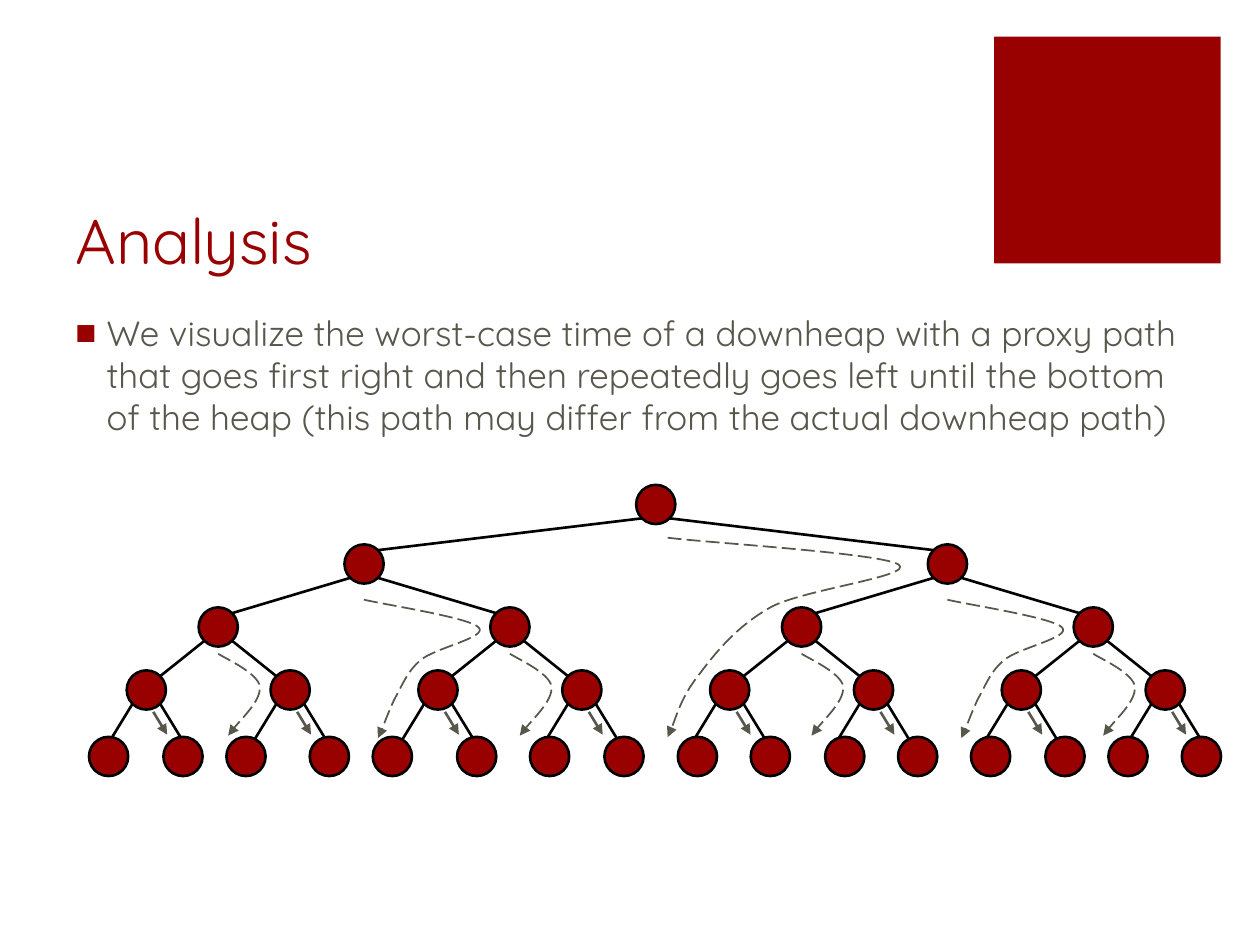
from lxml.etree import SubElement
from pptx import Presentation
from pptx.dml.color import RGBColor
from pptx.enum.dml import MSO_LINE
from pptx.enum.shapes import MSO_CONNECTOR, MSO_SHAPE
from pptx.enum.text import MSO_ANCHOR
from pptx.oxml.ns import qn
from pptx.util import Cm, Pt

RED, BLACK, GRAY = "990000", "000000", "59564B"
FONT = "Quicksand"
NODE = 0.79
CORNER = 0.28
ROOT_X = 11.42
SPREADS = [5.88, 2.94, 1.45]
LEVEL_Y = [0.39, 1.59, 2.86, 4.13]
LEAF_Y = 5.47
LEAF_X = [0.39, 1.89, 3.16, 4.84, 6.11, 7.81, 9.28, 10.78,
          12.26, 13.73, 15.23, 16.7, 18.17, 19.67, 20.94, 22.42]
LEAF_EDGE = (0.72, 1.0)
ARROW = [(0.14, 0.44), (0.42, 0.9)]
PROXY_PATHS = [
    [(0.24, 0.67), (1, 0.77), (4.53, 0.98), (4.89, 1.21), (5.25, 1.44),
     (2.98, 1.71), (2.32, 2.07), (1.64, 2.45), (1.21, 2.98), (0.88, 3.42),
     (0.52, 3.87), (0.37, 4.43), (0.24, 4.69)],
    [(0, 0.72), (0.41, 0.82), (2.13, 1.08), (2.31, 1.28), (2.51, 1.48),
     (1.42, 1.69), (1.14, 1.94), (0.86, 2.17), (0.76, 2.47), (0.61, 2.73),
     (0.48, 3.01), (0.36, 3.36), (0.28, 3.51)],
    [(0, 0.54), (0.15, 0.64), (0.79, 0.92), (0.84, 1.2), (0.86, 1.48),
     (0.33, 1.99), (0.2, 2.19)],
]


def color(value):
    """Return the colour for a hex string."""
    return RGBColor.from_string(value)


def add_text(page, box, text, size=20, fill=GRAY, anchor=MSO_ANCHOR.TOP, bullet=None):
    """Add one paragraph of text in a box, with an optional bullet."""
    shape = page.shapes.add_textbox(*map(Cm, box))
    frame = shape.text_frame
    frame.word_wrap = True
    frame.vertical_anchor = anchor
    para = frame.paragraphs[0]
    span = para.add_run()
    span.text = text
    span.font.name = FONT
    span.font.size = Pt(size)
    span.font.color.rgb = color(fill)
    if bullet:
        props = para._p.get_or_add_pPr()
        indent = Cm(0.63)
        props.set("marL", str(indent))
        props.set("indent", str(-indent))
        SubElement(SubElement(props, qn("a:buClr")), qn("a:srgbClr"), val=RED)
        SubElement(props, qn("a:buFont"), typeface="Arial")
        SubElement(props, qn("a:buChar"), char=bullet)


def add_solid(page, kind, box, outline=None):
    """Add a red preset shape, outlined if a colour is given."""
    shape = page.shapes.add_shape(kind, *map(Cm, box))
    shape.shadow.inherit = False
    shape.fill.solid()
    shape.fill.fore_color.rgb = color(RED)
    if outline:
        shape.line.color.rgb = color(outline)
        shape.line.width = Pt(1.5)
    else:
        shape.line.fill.background()


def add_node(page, center):
    """Add a tree node around its center."""
    x, y = center
    add_solid(page, MSO_SHAPE.OVAL, (x - NODE / 2, y - NODE / 2, NODE, NODE), BLACK)


def dash_with_arrow(line):
    """Make a line long-dashed with a triangle at its end."""
    line.dash_style = MSO_LINE.LONG_DASH
    SubElement(line._get_or_add_ln(), qn("a:tailEnd"), type="triangle")


def add_line(page, start, end, stroke=BLACK):
    """Add a straight line between two points."""
    line = page.shapes.add_connector(MSO_CONNECTOR.STRAIGHT, *map(Cm, (*start, *end)))
    line.line.color.rgb = color(stroke)
    line.line.width = Pt(1.5)
    SubElement(line._element.spPr, qn("a:effectLst"))
    return line


def add_curve(page, points):
    """Add a dashed arrow of cubic curves through the start and control points."""
    start, *rest = [(Cm(x), Cm(y)) for x, y in points]
    builder = page.shapes.build_freeform(*start)
    builder.add_line_segments(rest, close=False)
    shape = builder.convert_to_shape()
    shape.shadow.inherit = False
    shape.fill.background()
    shape.line.color.rgb = color(GRAY)
    shape.line.width = Pt(1)
    dash_with_arrow(shape.line)
    segments = list(shape._element.iter(qn("a:lnTo")))
    outline = segments[0].getparent()
    for first in range(0, len(segments), 3):
        curve = SubElement(outline, qn("a:cubicBezTo"))
        for segment in segments[first:first + 3]:
            curve.append(segment[0])
            outline.remove(segment)


def shift(points, origin):
    """Move points by an origin."""
    return [(origin[0] + x, origin[1] + y) for x, y in points]


def add_tree(page, left, top):
    """Draw the heap with its proxy paths from a top left corner."""
    levels = [[(left + ROOT_X, top + LEVEL_Y[0])]]
    for spread, y in zip(SPREADS, LEVEL_Y[1:]):
        levels.append([(x + side * spread, top + y)
                       for x, _ in levels[-1] for side in (-1, 1)])
    for parents, children in zip(levels, levels[1:]):
        for index, (x, y) in enumerate(children):
            side = 1 if index % 2 else -1
            parent_x, parent_y = parents[index // 2]
            add_line(page, (parent_x + side * CORNER, parent_y + CORNER),
                     (x - side * CORNER, y - CORNER))
    for x, y in levels[-1]:
        for side in (-1, 1):
            add_line(page, (x + side * CORNER, y + CORNER),
                     (x + side * LEAF_EDGE[0], y + LEAF_EDGE[1]))
    for level in levels:
        for center in level:
            add_node(page, center)
    for level, path_points in zip(levels, PROXY_PATHS):
        for center in level:
            add_curve(page, shift(path_points, center))
    for center in levels[-1]:
        arrow = add_line(page, *shift(ARROW, center), stroke=GRAY)
        dash_with_arrow(arrow.line)
    for x in LEAF_X:
        add_node(page, (left + x, top + LEAF_Y))


def add_heading(page, left, top):
    """Place the title, the statement and the corner square."""
    add_solid(page, MSO_SHAPE.RECTANGLE, (left + 18.77, top, 4.57, 4.57))
    add_text(page, (left, top + 1.8, 18.08, 3.18), "Analysis",
             size=36, fill=RED, anchor=MSO_ANCHOR.BOTTOM)
    add_text(page, (left, top + 5.41, 22.94, 3),
             "We visualize the worst-case time of a downheap with a proxy path "
             "that goes first right and then repeatedly goes left until the bottom "
             "of the heap (this path may differ from the actual downheap path)",
             bullet="■")


def main():
    """Build and save the deck."""
    deck = Presentation()
    deck.slide_width, deck.slide_height = Cm(25.4), Cm(19.05)
    page = deck.slides.add_slide(deck.slide_layouts[6])
    add_heading(page, 1.27, 0.74)
    add_tree(page, 1.8, 9.78)
    deck.save("out.pptx")


if __name__ == "__main__":
    main()
